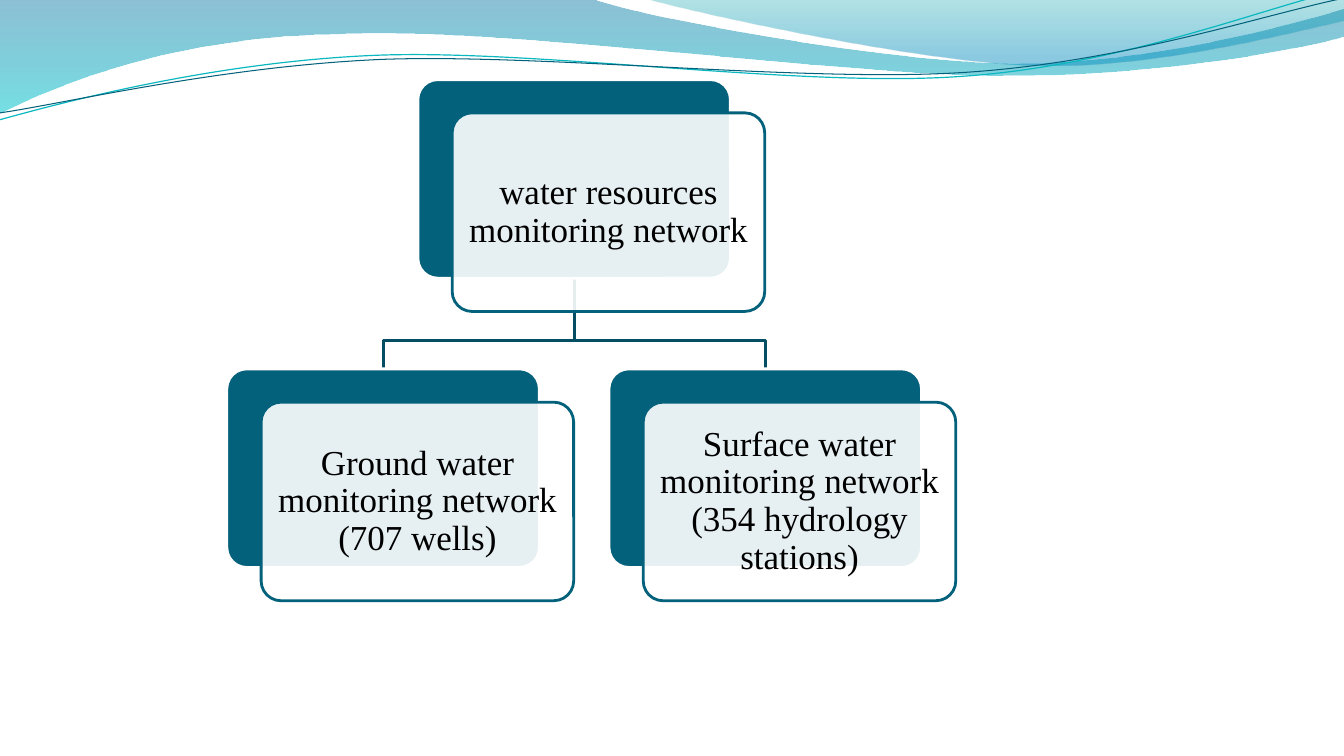
from lxml.etree import SubElement
from pptx import Presentation
from pptx.dml.color import RGBColor
from pptx.enum.shapes import MSO_SHAPE
from pptx.enum.text import MSO_ANCHOR, PP_ALIGN
from pptx.oxml.ns import qn
from pptx.util import Inches, Pt

WHITE = RGBColor(0xFF, 0xFF, 0xFF)
BLACK = RGBColor(0x00, 0x00, 0x00)
PETROL = RGBColor(0x04, 0x61, 0x7B)
DARK_PETROL = RGBColor(0x03, 0x4E, 0x63)
TURQUOISE = RGBColor(0x0A, 0xB8, 0xBF)
BAND_BLUE = RGBColor(0x00, 0x74, 0xA1)
BAND_AQUA = RGBColor(0x00, 0xC6, 0xCF)
CREST_GREEN = RGBColor(0x00, 0xA1, 0xA9)
CREST_BLUE = RGBColor(0x00, 0x8B, 0xBF)

CARD_W, CARD_H = 3.1, 1.97
OFFSET_X, OFFSET_Y = 0.34, 0.33


def lines(*points):
    """One straight segment to each point."""
    return [(point,) for point in points]


def curves(*points):
    """One cubic segment for every three points: two controls and the end."""
    return [points[i:i + 3] for i in range(0, len(points), 3)]


def set_alpha(color_element, percent):
    SubElement(color_element, qn("a:alpha")).set("val", str(percent * 1000))


class SlideBuilder:
    font = "Times New Roman"
    text_size = Pt(25)
    line_width = 2
    card_margin = Inches(0.09)

    def __init__(self, slide):
        self.shapes = slide.shapes

    def outline(self, start, segments, closed):
        builder = self.shapes.build_freeform(Inches(start[0]), Inches(start[1]))
        builder.add_line_segments([(Inches(x), Inches(y))
                                   for segment in segments for x, y in segment], close=closed)
        shape = builder.convert_to_shape()
        shape.shadow.inherit = False
        # Join the three steps of each cubic segment into one curve
        steps = iter(list(shape._element.spPr.iter(qn("a:lnTo"))))
        for segment in segments:
            first, *others = [next(steps) for _ in segment]
            if others:
                first.tag = qn("a:cubicBezTo")
                for step in others:
                    first.append(step[0])
                    step.getparent().remove(step)
        return shape

    def band(self, start, segments, stops):
        """Closed wave with a vertical gradient of (position, colour, opacity)."""
        shape = self.outline(start, segments, True)
        shape.line.fill.background()
        shape.fill.gradient()
        shape.fill.gradient_angle = 270
        for stop, (position, color, _) in zip(shape.fill.gradient_stops, stops):
            stop.position = position
            stop.color.rgb = color
        colors = list(shape._element.spPr.iter(qn("a:srgbClr")))
        for element, (_, _, opacity) in zip(colors, stops):
            set_alpha(element, opacity)

    def stroke(self, start, segments, color, width):
        shape = self.outline(start, segments, False)
        shape.fill.background()
        shape.line.color.rgb = color
        shape.line.width = Pt(width)

    def panel(self, x, y, fill, line):
        shape = self.shapes.add_shape(MSO_SHAPE.ROUNDED_RECTANGLE, Inches(x), Inches(y),
                                      Inches(CARD_W), Inches(CARD_H))
        shape.adjustments[0] = 0.1
        shape.shadow.inherit = False
        shape.fill.solid()
        shape.fill.fore_color.rgb = fill
        shape.line.color.rgb = line
        shape.line.width = Pt(self.line_width)
        return shape

    def card(self, x, y, label):
        """Dark panel with a translucent, labelled panel shifted in front."""
        self.panel(x, y, PETROL, WHITE)
        front = self.panel(x + OFFSET_X, y + OFFSET_Y, WHITE, PETROL)
        set_alpha(front._element.spPr.find(qn("a:solidFill"))[0], 90)
        frame = front.text_frame
        frame.word_wrap = True
        frame.vertical_anchor = MSO_ANCHOR.MIDDLE
        frame.margin_left = frame.margin_right = self.card_margin
        frame.margin_top = frame.margin_bottom = self.card_margin
        paragraph = frame.paragraphs[0]
        paragraph.alignment = PP_ALIGN.CENTER
        paragraph.line_spacing = 0.9
        run = paragraph.add_run()
        run.text = label
        run.font.name = self.font
        run.font.size = self.text_size
        run.font.color.rgb = BLACK


def main():
    presentation = Presentation()
    presentation.slide_width = Inches(13.33)
    presentation.slide_height = Inches(7.5)
    builder = SlideBuilder(presentation.slides.add_slide(presentation.slide_layouts[6]))

    # Wave bands along the top
    upper_edge = curves((6.34, 0.17), (8.85, 0.63), (10.11, 0.63),
                        (11.38, 0.63), (12.78, 0.26), (13.33, 0.09))
    lower_edge = curves((13.11, 0.44), (11.6, 0.76), (9.94, 0.75),
                        (8.29, 0.75), (5.09, 0.28), (3.43, 0.34),
                        (1.72, 0.36), (0.61, 0.83), (-0.01, 1.13))
    builder.band((0, 0),
                 lines((5.87, -0.01)) + upper_edge + lines((13.35, 0.36)) + lower_edge,
                 [(0, BAND_BLUE, 45), (1, BAND_AQUA, 55)])
    crest = curves((6.79, 0.11), (9.09, 0.62), (10.25, 0.65),
                   (11.41, 0.69), (12.82, 0.32), (13.33, 0.21))
    builder.band((6.39, -0.01), crest + lines((13.33, 0)),
                 [(0, CREST_GREEN, 30), (0.8, CREST_BLUE, 45)])

    # Thin wave lines
    builder.stroke((-0.01, 1.19),
                   curves((0.64, 1.01), (2.11, 0.62), (3.69, 0.55),
                          (5.27, 0.48), (7.9, 0.87), (9.5, 0.76),
                          (11.1, 0.66), (12.52, 0.08), (13.31, -0.1)), TURQUOISE, 0.85)
    builder.stroke((0, 1.12),
                   curves((0.63, 1.03), (2.18, 0.66), (3.78, 0.59),
                          (5.37, 0.53), (7.96, 0.82), (9.55, 0.72),
                          (11.15, 0.62), (12.55, 0.14), (13.34, -0.02)), PETROL, 0.75)

    # Hierarchy: branches behind, cards in front
    networks = [(2.25, "Ground water monitoring network (707 wells)"),
                (6.04, "Surface water monitoring network (354 hydrology stations)")]
    root_x, root_y = sum(x for x, _ in networks) / len(networks), 0.79
    network_y, branch_y = 3.66, 3.38
    root_middle = root_x + CARD_W / 2
    for network_x, _ in reversed(networks):
        network_middle = network_x + CARD_W / 2
        builder.stroke((root_middle, root_y + CARD_H),
                       lines((root_middle, branch_y), (network_middle, branch_y),
                             (network_middle, network_y)),
                       DARK_PETROL, builder.line_width)
    builder.card(root_x, root_y, "water resources monitoring network")
    for network_x, label in networks:
        builder.card(network_x, network_y, label)

    presentation.save("out.pptx")


if __name__ == "__main__":
    main()
